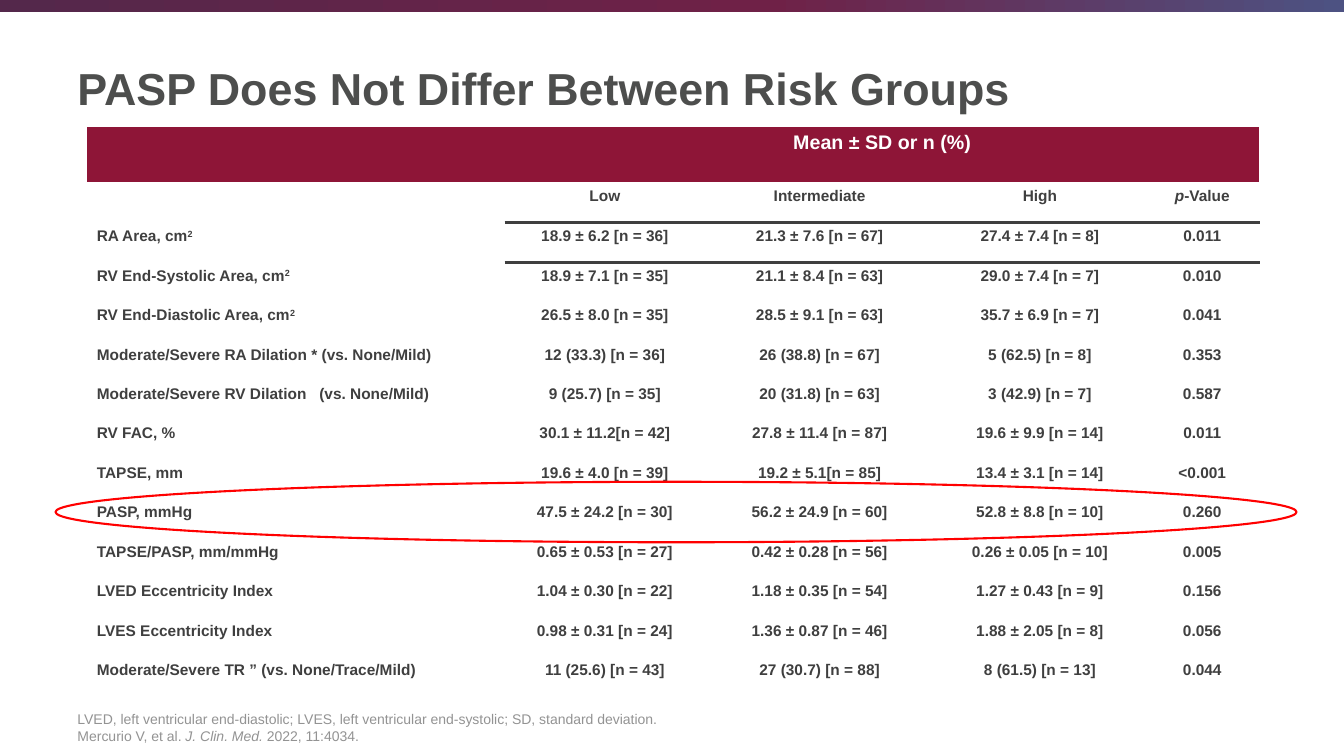
import copy
import dataclasses

import lxml.etree
import pptx
import pptx.dml.color
import pptx.enum.shapes
import pptx.enum.text
import pptx.oxml.ns
import pptx.util

PX = 9144
ALIGN = pptx.enum.text.PP_ALIGN
ANCHOR = pptx.enum.text.MSO_ANCHOR
SHAPE = pptx.enum.shapes.MSO_SHAPE


@dataclasses.dataclass(frozen=True)
class Theme:
    """Colours and type sizes of the slide."""
    font: str = "Arial"
    title: str = "4D4E4D"
    header: str = "8E1537"
    text: str = "3F3F3F"
    white: str = "FFFFFF"
    note: str = "939393"
    ring: str = "FF0000"
    band: tuple = ((0, "54284B"), (0.57, "6F2147"), (1, "4D5282"))
    title_size: int = 32
    header_size: int = 14
    cell_size: int = 11
    note_size: int = 10
    rule: float = 2.25
    hairline: float = 1


THEME = Theme()
COLUMNS = (415, 198, 228, 209, 113)
HEADER_HEIGHT = 55
HEADINGS = ("", "Low", "Intermediate", "High", (("p", "italic"), ("-Value", "")))


def area(name):
    """Return a label that ends in square centimetres."""
    return ((name + ", cm", ""), ("2", "super"))


RESULTS = (
    (area("RA Area"), "18.9 ± 6.2 [n = 36]", "21.3 ± 7.6 [n = 67]", "27.4 ± 7.4 [n = 8]", "0.011"),
    (area("RV End-Systolic Area"), "18.9 ± 7.1 [n = 35]", "21.1 ± 8.4 [n = 63]", "29.0 ± 7.4 [n = 7]", "0.010"),
    (area("RV End-Diastolic Area"), "26.5 ± 8.0 [n = 35]", "28.5 ± 9.1 [n = 63]", "35.7 ± 6.9 [n = 7]", "0.041"),
    ("Moderate/Severe RA Dilation * (vs. None/Mild)", "12 (33.3) [n = 36]", "26 (38.8) [n = 67]", "5 (62.5) [n = 8]", "0.353"),
    ("Moderate/Severe RV Dilation   (vs. None/Mild)", "9 (25.7) [n = 35]", "20 (31.8) [n = 63]", "3 (42.9) [n = 7]", "0.587"),
    ("RV FAC, %", "30.1 ± 11.2[n = 42]", "27.8 ± 11.4 [n = 87]", "19.6 ± 9.9 [n = 14]", "0.011"),
    ("TAPSE, mm", "19.6 ± 4.0 [n = 39]", "19.2 ± 5.1[n = 85]", "13.4 ± 3.1 [n = 14]", "<0.001"),
    ("PASP, mmHg", "47.5 ± 24.2 [n = 30]", "56.2 ± 24.9 [n = 60]", "52.8 ± 8.8 [n = 10]", "0.260"),
    ("TAPSE/PASP, mm/mmHg", "0.65 ± 0.53 [n = 27]", "0.42 ± 0.28 [n = 56]", "0.26 ± 0.05 [n = 10]", "0.005"),
    ("LVED Eccentricity Index", "1.04 ± 0.30 [n = 22]", "1.18 ± 0.35 [n = 54]", "1.27 ± 0.43 [n = 9]", "0.156"),
    ("LVES Eccentricity Index", "0.98 ± 0.31 [n = 24]", "1.36 ± 0.87 [n = 46]", "1.88 ± 2.05 [n = 8]", "0.056"),
    ("Moderate/Severe TR ” (vs. None/Trace/Mild)", "11 (25.6) [n = 43]", "27 (30.7) [n = 88]", "8 (61.5) [n = 13]", "0.044"),
)
NOTES = (
    "LVED, left ventricular end-diastolic; LVES, left ventricular end-systolic; SD, standard deviation.",
    (("Mercurio V, et al. ", ""), ("J. Clin. Med. ", "italic"), ("2022, 11:4034.", "")),
)


def rgb(colour):
    """Turn a hex string into a colour."""
    return pptx.dml.color.RGBColor.from_string(colour)


def emu(box):
    """Turn a box in px into EMU."""
    return [length * PX for length in box]


def write(para, content, size, colour, bold=False, align=ALIGN.LEFT):
    """Fill a paragraph with plain text or with (text, style) spans."""
    para.alignment = align
    font = para.font
    font.name, font.size, font.bold = THEME.font, pptx.util.Pt(size), bold
    font.color.rgb = rgb(colour)
    for text, style in ((content, ""),) if isinstance(content, str) else content:
        span = para.add_run()
        span.text = text
        if style == "italic":
            span.font.italic = True
        elif style == "super":
            span.font._element.set("baseline", "30000")


def add_text(page, box, lines, anchor, size, colour, bold=False):
    """Place a wrapped text box with one paragraph per line."""
    frame = page.shapes.add_textbox(*emu(box)).text_frame
    frame.word_wrap = True
    frame.vertical_anchor = anchor
    for index, line in enumerate(lines):
        para = frame.add_paragraph() if index else frame.paragraphs[0]
        write(para, line, size, colour, bold)


def add_band(page, box):
    """Place the gradient band along the top edge."""
    band = page.shapes.add_shape(SHAPE.RECTANGLE, *emu(box))
    band.shadow.inherit = False
    band.line.fill.background()
    band.fill.gradient()
    band.fill.gradient_angle = 0
    first = band.fill.gradient_stops[0]._gs
    first.addnext(copy.deepcopy(first))
    for stop, (position, colour) in zip(band.fill.gradient_stops, THEME.band):
        stop.position = position
        stop.color.rgb = rgb(colour)


def set_edge(cell, side, colour=None, width=0):
    """Draw one cell border, or none without a colour."""
    qn = pptx.oxml.ns.qn
    edge = lxml.etree.Element(qn("a:ln" + side), w=str(int(width * 12700)))
    if colour:
        solid = lxml.etree.SubElement(edge, qn("a:solidFill"))
        lxml.etree.SubElement(solid, qn("a:srgbClr"), val=colour)
    else:
        lxml.etree.SubElement(edge, qn("a:noFill"))
    cell._tc.get_or_add_tcPr().insert("LRTB".index(side), edge)


def style_cell(cell, row, column):
    """Set the fill and the four borders of a cell by its place."""
    if row == 0:
        cell.fill.solid()
        cell.fill.fore_color.rgb = rgb(THEME.header)
    else:
        cell.fill.background()
    for side in "LRTB":
        ruled = column > 0 and (side, row) in (("B", 1), ("T", 2), ("B", 2), ("T", 3))
        if row == 0 or (row == 1 and side == "T"):
            set_edge(cell, side)
        elif ruled:
            set_edge(cell, side, THEME.text, THEME.rule)
        else:
            set_edge(cell, side, THEME.white, THEME.hairline)


def add_results(page, box):
    """Place the table of results by risk group."""
    rows = (HEADINGS,) + RESULTS
    table = page.shapes.add_table(len(rows) + 1, len(COLUMNS), *emu(box)).table
    table.first_row = table.horz_banding = False
    for column, width in zip(table.columns, COLUMNS):
        column.width = width * PX
    for row in table.rows:
        row.height = (box[3] - HEADER_HEIGHT) * PX // len(rows)
    table.rows[0].height = HEADER_HEIGHT * PX
    for row in range(len(rows) + 1):
        for column in range(len(COLUMNS)):
            style_cell(table.cell(row, column), row, column)
    table.cell(0, 1).merge(table.cell(0, len(COLUMNS) - 1))
    write(table.cell(0, 1).text_frame.paragraphs[0], "Mean ± SD or n (%)",
          THEME.header_size, THEME.white, True, ALIGN.CENTER)
    for row, contents in enumerate(rows, 1):
        for column, content in enumerate(contents):
            para = table.cell(row, column).text_frame.paragraphs[0]
            write(para, content, THEME.cell_size, THEME.text, True,
                  ALIGN.CENTER if column else ALIGN.LEFT)


def add_ring(page, box):
    """Place the outline that marks the PASP row."""
    ring = page.shapes.add_shape(SHAPE.OVAL, *emu(box))
    ring.shadow.inherit = False
    ring.fill.background()
    ring.line.color.rgb = rgb(THEME.ring)
    ring.line.width = pptx.util.Pt(1.5)


def main():
    """Build the deck and save it."""
    deck = pptx.Presentation()
    deck.slide_width, deck.slide_height = emu((1333, 750))
    page = deck.slides.add_slide(deck.slide_layouts[6])
    add_band(page, (0, 0, 1333, 12))
    add_text(page, (67, 22, 1175, 130), ["PASP Does Not Differ Between Risk Groups"],
             ANCHOR.MIDDLE, THEME.title_size, THEME.title, True)
    add_results(page, (86, 126, 1163, 564))
    add_ring(page, (55, 478, 1231, 60))
    add_text(page, (67, 695, 1175, 48), NOTES, ANCHOR.BOTTOM, THEME.note_size, THEME.note)
    deck.save("out.pptx")


if __name__ == "__main__":
    main()
